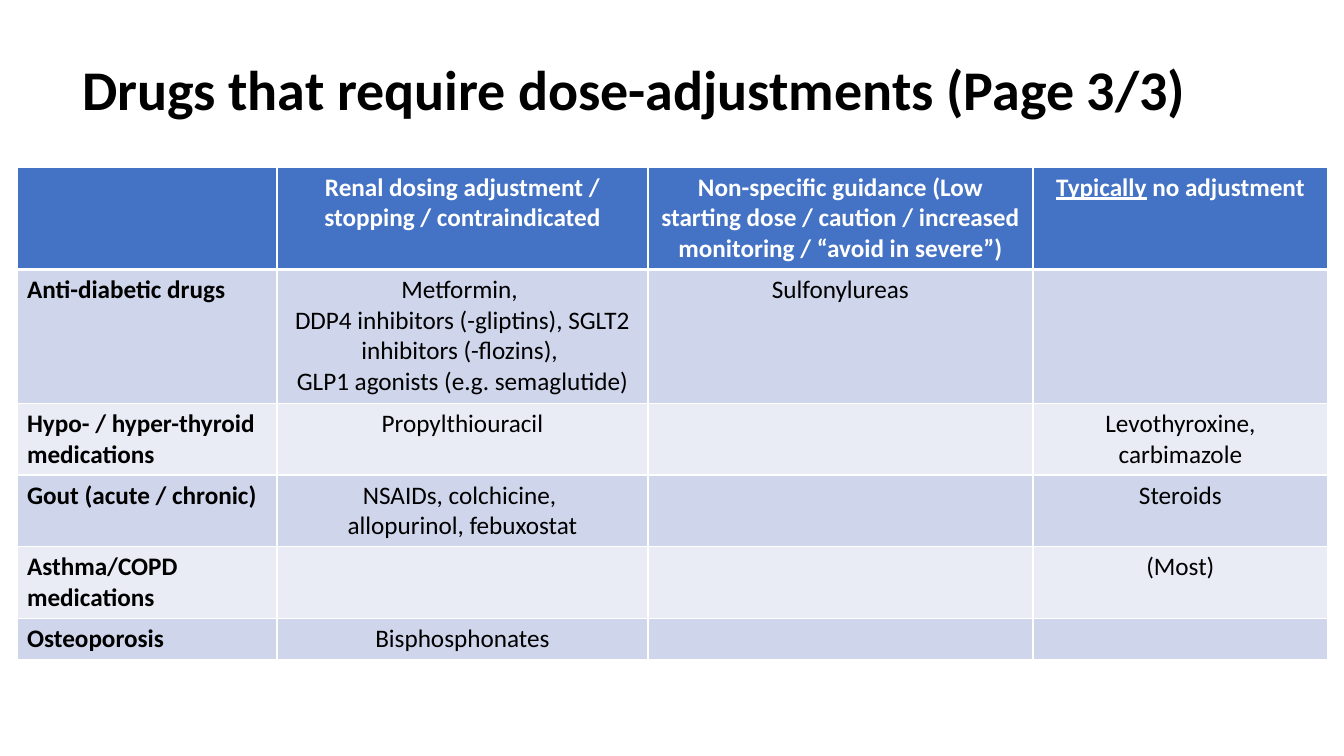
"""Build the slide on drugs that require dose adjustments, as a title over a table."""
from dataclasses import dataclass

from lxml.etree import SubElement
from pptx import Presentation
from pptx.dml.color import RGBColor
from pptx.enum.text import MSO_ANCHOR, PP_ALIGN
from pptx.oxml.ns import qn
from pptx.util import Pt

TITLE = "Drugs that require dose-adjustments (Page 3/3)"
UNDERLINED = "Typically"
HEADINGS = [
    [],
    ["Renal dosing adjustment / stopping / contraindicated"],
    ["Non-specific guidance (Low starting dose / caution / increased monitoring / “avoid in severe”)"],
    ["Typically no adjustment"],
]
DRUG_GROUPS = [
    [
        ["Anti-diabetic drugs"],
        [
            "Metformin, ",
            "DDP4 inhibitors (-gliptins), SGLT2 inhibitors (-flozins), ",
            "GLP1 agonists (e.g. semaglutide)",
        ],
        ["Sulfonylureas"],
        [],
    ],
    [["Hypo- / hyper-thyroid medications"], ["Propylthiouracil"], [], ["Levothyroxine, carbimazole"]],
    [["Gout (acute / chronic)"], ["NSAIDs, colchicine, ", "allopurinol, febuxostat"], [], ["Steroids"]],
    [["Asthma/COPD medications"], [], [], ["(Most)"]],
    [["Osteoporosis"], ["Bisphosphonates"], [], []],
]

SLIDE_SIZE = (1344, 756)
TITLE_BOX = (72, 19, 1257, 146)
TABLE_ORIGIN = (17, 167)
COLUMN_WIDTHS = [260, 371, 385, 295]
ROW_HEIGHTS = [102, 134, 71, 71, 72, 40]


@dataclass(frozen=True)
class Theme:
    """Colours, font and sizes of the slide."""
    font: str = "Calibri"
    title_size: int = 40
    table_size: int = 18
    ink: str = "000000"
    paper: str = "FFFFFF"
    header: str = "4472C4"
    bands: tuple = ("CFD5EA", "E9EBF5")
    thin_rule: int = 1
    thick_rule: int = 3


THEME = Theme()


def px(length):
    """Turn px into EMU at 100.8 px to the inch."""
    return round(length * 914400 / 100.8)


def add_run(paragraph, text, size, colour, bold, underline=None):
    """Add one formatted run."""
    run = paragraph.add_run()
    run.text = text
    run.font.name = THEME.font
    run.font.size = Pt(size)
    run.font.bold = bold
    run.font.underline = underline
    run.font.color.rgb = RGBColor.from_string(colour)


def draw_rules(cell, row):
    """Draw the cell's four borders, thicker below the header."""
    properties = cell._tc.get_or_add_tcPr()
    thick_side = {0: "B", 1: "T"}.get(row)
    for side in "LRTB":
        width = THEME.thick_rule if side == thick_side else THEME.thin_rule
        rule = SubElement(properties, qn(f"a:ln{side}"), w=str(Pt(width)))
        solid = SubElement(rule, qn("a:solidFill"))
        SubElement(solid, qn("a:srgbClr"), val=THEME.paper)


def fill_cell(cell, lines, row, column):
    """Format a cell and write its lines."""
    draw_rules(cell, row)
    cell.fill.solid()
    fill = THEME.bands[(row - 1) % 2] if row else THEME.header
    cell.fill.fore_color.rgb = RGBColor.from_string(fill)
    style = (THEME.table_size, THEME.ink if row else THEME.paper, row == 0 or column == 0)
    if not lines:
        cell.text_frame.paragraphs[0].font.size = Pt(THEME.table_size)
    for index, line in enumerate(lines):
        frame = cell.text_frame
        paragraph = frame.add_paragraph() if index else frame.paragraphs[0]
        paragraph.alignment = PP_ALIGN.CENTER if column else PP_ALIGN.LEFT
        if line.startswith(UNDERLINED):
            add_run(paragraph, UNDERLINED, *style, underline=True)
            line = line.removeprefix(UNDERLINED)
        add_run(paragraph, line, *style)


def add_title(slide):
    """Place and format the title."""
    title = slide.shapes.title
    title.left, title.top, title.width, title.height = map(px, TITLE_BOX)
    title.text_frame.vertical_anchor = MSO_ANCHOR.MIDDLE
    heading = title.text_frame.paragraphs[0]
    heading.alignment = PP_ALIGN.LEFT
    heading.line_spacing = 0.9
    add_run(heading, TITLE, THEME.title_size, THEME.ink, True)


def add_drug_table(slide):
    """Add the table of drug groups."""
    rows = [HEADINGS, *DRUG_GROUPS]
    box = map(px, (*TABLE_ORIGIN, sum(COLUMN_WIDTHS), sum(ROW_HEIGHTS)))
    table = slide.shapes.add_table(len(rows), len(HEADINGS), *box).table
    for column, width in zip(table.columns, COLUMN_WIDTHS):
        column.width = px(width)
    for row, height in zip(table.rows, ROW_HEIGHTS):
        row.height = px(height)
    for row, entries in enumerate(rows):
        for column, lines in enumerate(entries):
            fill_cell(table.cell(row, column), lines, row, column)


def main():
    """Build and save the slide."""
    deck = Presentation()
    deck.slide_width, deck.slide_height = map(px, SLIDE_SIZE)
    slide = deck.slides.add_slide(deck.slide_layouts[5])
    add_title(slide)
    add_drug_table(slide)
    deck.save("out.pptx")


if __name__ == "__main__":
    main()
